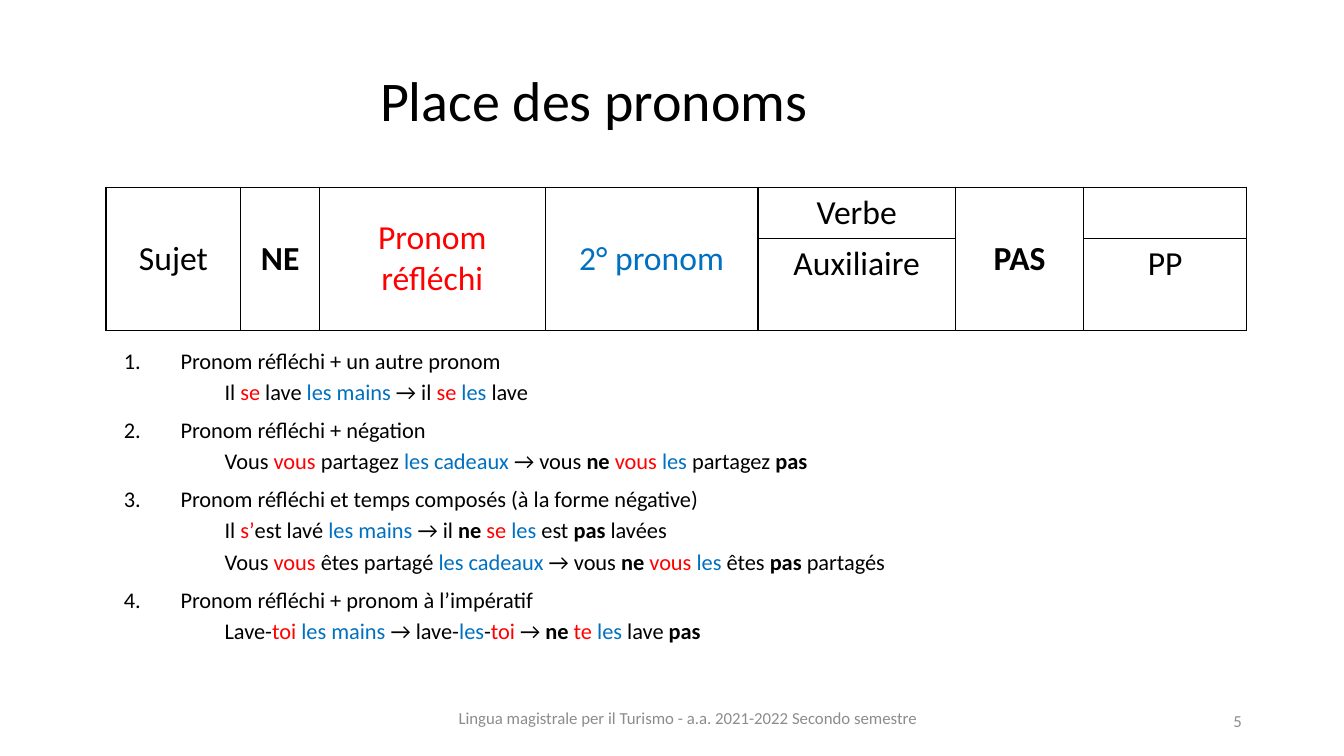
from dataclasses import dataclass

import pptx
import pptx.dml.color
import pptx.enum.text
import pptx.oxml
import pptx.oxml.ns
import pptx.util
from pptx.enum.text import MSO_ANCHOR, PP_ALIGN
from pptx.util import Cm


@dataclass(frozen=True)
class Theme:
    font: str = "Calibri"
    black: str = "000000"
    reflexive: str = "FF0000"
    second: str = "0070C0"
    muted: str = "8C8C8C"
    title_size: int = 40
    table_size: int = 24
    body_size: int = 16
    footer_size: int = 12


THEME = Theme()

COLUMN_WIDTHS = [3.4, 1.98, 5.69, 5.36, 4.98, 3.23, 4.11]
ROW_HEIGHTS = [1.3, 2.31]

# Column, text, role of each cell that spans both rows
TALL_CELLS = [
    (0, "Sujet", "plain"),
    (1, "NE", "bold"),
    (2, "Pronom réfléchi", "reflexive"),
    (3, "2° pronom", "second"),
    (5, "PAS", "bold"),
]
SINGLE_CELLS = [(0, 4, "Verbe"), (1, 4, "Auxiliaire"), (1, 6, "PP")]


def red(text):
    return text, "reflexive"


def blue(text):
    return text, "second"


def bold(text):
    return text, "bold"


# Each rule has a heading and examples; an example is a list of plain or marked parts
RULES = [
    ("Pronom réfléchi + un autre pronom", [
        ["Il ", red("se"), " lave ", blue("les mains"), " → il ",
         red("se "), blue("les"), " lave"],
    ]),
    ("Pronom réfléchi + négation", [
        ["Vous ", red("vous"), " partagez ", blue("les cadeaux "), "→ vous ",
         bold("ne "), red("vous "), blue("les"), " partagez ", bold("pas")],
    ]),
    ("Pronom réfléchi et temps composés (à la forme négative)", [
        ["Il ", red("s’"), "est lavé ", blue("les mains "), "→ il ",
         bold("ne "), red("se "), blue("les"), " est ", bold("pas"), " lavées"],
        ["Vous ", red("vous"), " êtes partagé ", blue("les cadeaux "), "→ vous ",
         bold("ne "), red("vous "), blue("les"), " êtes ", bold("pas"), " partagés"],
    ]),
    ("Pronom réfléchi + pronom à l’impératif", [
        ["Lave-", red("toi "), blue("les mains "), "→ lave-", blue("les"), "-",
         red("toi"), " → ", bold("ne "), red("te "), blue("les"), " lave ", bold("pas")],
    ]),
]


def format_span(span, size, color=THEME.black, is_bold=False):
    span.font.name = THEME.font
    span.font.size = pptx.util.Pt(size)
    span.font.bold = is_bold
    span.font.color.rgb = pptx.dml.color.RGBColor.from_string(color)


def format_role(span, size, role):
    """Format a run by its grammatical role: plain, bold, reflexive or second."""
    colors = {"reflexive": THEME.reflexive, "second": THEME.second}
    format_span(span, size, colors.get(role, THEME.black), role == "bold")


def add_text_frame(page, left, top, width, height):
    box = page.shapes.add_textbox(Cm(left), Cm(top), Cm(width), Cm(height))
    box.text_frame.word_wrap = True
    return box.text_frame


def add_label(page, place, text, size, color, align, anchor=MSO_ANCHOR.MIDDLE):
    frame = add_text_frame(page, *place)
    frame.text = text
    frame.vertical_anchor = anchor
    para = frame.paragraphs[0]
    para.alignment = align
    format_span(para.runs[0], size, color)


def outline_cell(cell):
    properties = cell._tc.get_or_add_tcPr()
    for side in ("lnL", "lnR", "lnT", "lnB"):
        properties.append(pptx.oxml.parse_xml(
            f'<a:{side} {pptx.oxml.ns.nsdecls("a")} w="12700"><a:solidFill>'
            f'<a:srgbClr val="{THEME.black}"/></a:solidFill></a:{side}>'))
    cell.fill.background()


def fill_cell(cell, text, role="plain"):
    cell.text = text
    para = cell.text_frame.paragraphs[0]
    para.alignment = PP_ALIGN.CENTER
    format_role(para.runs[0], THEME.table_size, role)


def add_order_table(page):
    """Add the table that shows the order of the words in a sentence."""
    table = page.shapes.add_table(
        len(ROW_HEIGHTS), len(COLUMN_WIDTHS), Cm(2.67), Cm(4.72),
        Cm(sum(COLUMN_WIDTHS)), Cm(sum(ROW_HEIGHTS))).table
    table.first_row = False
    table.horz_banding = False
    for column, width in zip(table.columns, COLUMN_WIDTHS):
        column.width = Cm(width)
    for row, height in zip(table.rows, ROW_HEIGHTS):
        row.height = Cm(height)
    for cell in table.iter_cells():
        outline_cell(cell)
    for column, text, role in TALL_CELLS:
        cell = table.cell(0, column)
        cell.merge(table.cell(1, column))
        cell.vertical_anchor = MSO_ANCHOR.MIDDLE
        fill_cell(cell, text, role)
    for row, column, text in SINGLE_CELLS:
        fill_cell(table.cell(row, column), text)


def add_line(frame, parts, level, space, left, indent, bullet):
    """Write one paragraph into the first empty one, or after the last."""
    first = frame.paragraphs[0]
    para = frame.add_paragraph() if first.runs else first
    para.level = level
    para.line_spacing = 0.9
    para.space_before = pptx.util.Pt(space)
    properties = para._p.get_or_add_pPr()
    properties.set("marL", str(Cm(left)))
    properties.set("indent", str(Cm(indent)))
    properties.append(pptx.oxml.parse_xml(
        f'<a:{bullet} {pptx.oxml.ns.nsdecls("a")}/>'))
    for part in parts:
        text, role = (part, "plain") if isinstance(part, str) else part
        span = para.add_run()
        span.text = text
        format_role(span, THEME.body_size, role)


def add_rules(page):
    frame = add_text_frame(page, 2.87, 8.69, 28.32, 8.38)
    for heading, examples in RULES:
        add_line(frame, [heading], 0, 10, 1.43, -1.43, 'buAutoNum type="arabicPeriod"')
        for parts in examples:
            add_line(frame, parts, 1, 5, 2.54, 0, "buNone")


def main():
    deck = pptx.Presentation()
    deck.slide_width, deck.slide_height = Cm(33.87), Cm(19.05)
    page = deck.slides.add_slide(deck.slide_layouts[6])
    add_rules(page)
    add_order_table(page)
    add_label(page, (11.23, 17.65, 12.22, 0.89),
              "Lingua magistrale per il Turismo - a.a. 2021-2022 Secondo semestre",
              THEME.footer_size, THEME.muted, PP_ALIGN.CENTER)
    add_label(page, (23.93, 17.65, 7.62, 1.02), "5",
              THEME.footer_size, THEME.muted, PP_ALIGN.RIGHT)
    add_label(page, (9.07, 1.52, 11.79, 1.96), "Place des pronoms",
              THEME.title_size, THEME.black, PP_ALIGN.CENTER, MSO_ANCHOR.TOP)
    deck.save("out.pptx")


if __name__ == "__main__":
    main()
